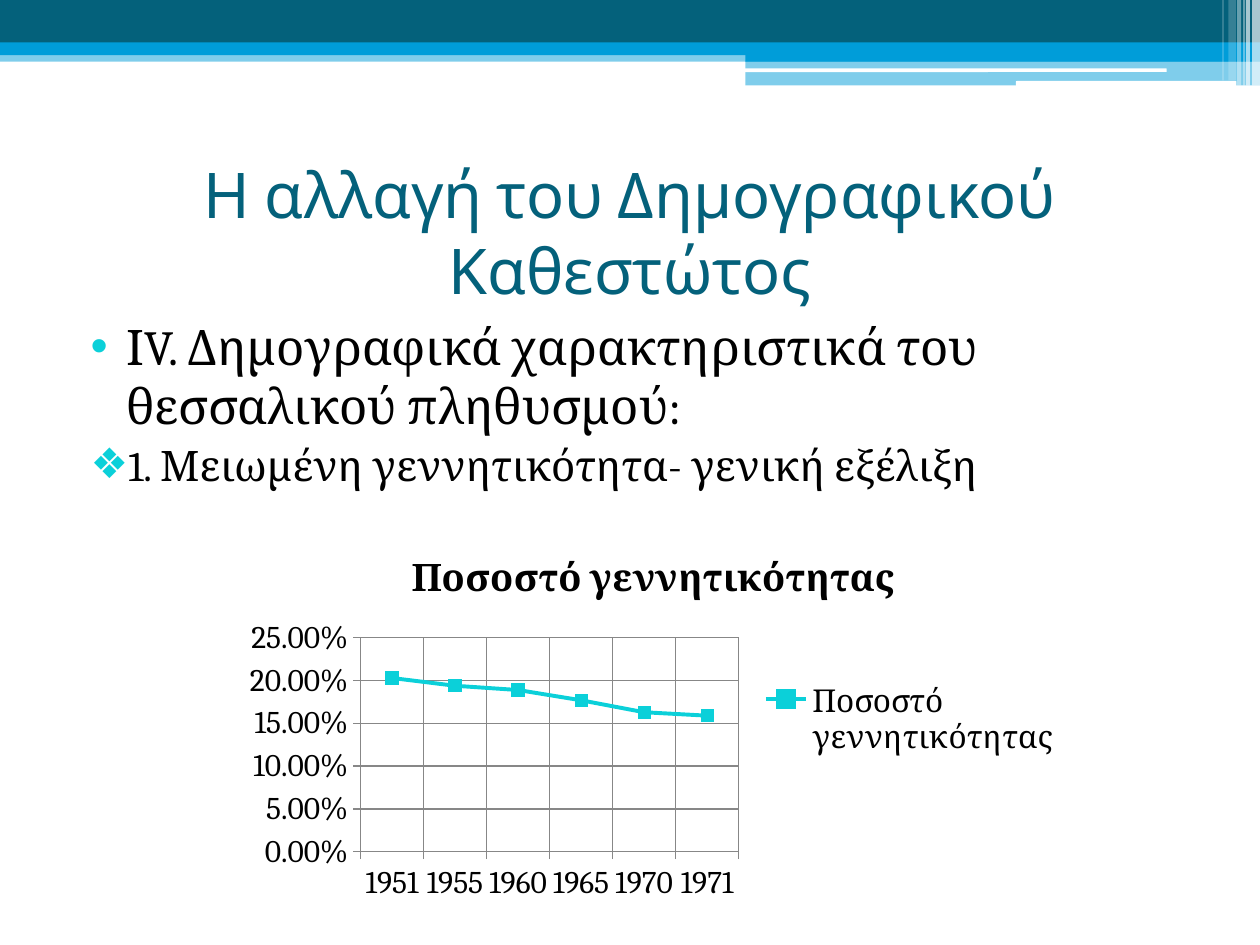
from lxml import etree
from pptx import Presentation
from pptx.chart.data import CategoryChartData
from pptx.dml.color import RGBColor
from pptx.enum.chart import XL_CHART_TYPE, XL_LEGEND_POSITION, XL_MARKER_STYLE, XL_TICK_MARK
from pptx.enum.shapes import MSO_SHAPE
from pptx.enum.text import MSO_ANCHOR, MSO_AUTO_SIZE, PP_ALIGN
from pptx.oxml.ns import qn
from pptx.util import Pt

RECT, ROUNDED = MSO_SHAPE.RECTANGLE, MSO_SHAPE.ROUNDED_RECTANGLE
LINE = XL_CHART_TYPE.LINE_MARKERS_STACKED
SQUARE, OUT, RIGHT = XL_MARKER_STYLE.SQUARE, XL_TICK_MARK.OUTSIDE, XL_LEGEND_POSITION.RIGHT
TOP, MIDDLE, CENTER, NO_FIT = MSO_ANCHOR.TOP, MSO_ANCHOR.MIDDLE, PP_ALIGN.CENTER, MSO_AUTO_SIZE.NONE
TEAL, BLUE, CYAN, WHITE, BLACK, GRAY = "04617B", "009DD9", "0BD0D9", "FFFFFF", "000000", "878787"


def rgb(color):
    return RGBColor.from_string(color)


def set_font(font, name, size, color, bold=False):
    for key, value in {"name": name, "size": Pt(size), "bold": bold}.items():
        setattr(font, key, value)
    font.color.rgb = rgb(color)


prs = Presentation()
prs.slide_width, prs.slide_height = Pt(720), Pt(540)
s = prs.slides.add_slide(prs.slide_layouts[1])

# Header bands and stripes: shape, left, top, width, height, colour, opacity %
bands = [
    (RECT, 0, 28.8, 720, 6.5, BLUE, 50),
    (RECT, 0, 0, 720, 24.5, TEAL, 100),
    (RECT, 0, 24.3, 720, 7.2, BLUE, 100),
    (RECT, 426, 28, 294, 7.2, BLUE, 100),
    (RECT, 426, 34.6, 294, 14.2, BLUE, 50),
    (ROUNDED, 425.5, 39.1, 241.2, 2.1, WHITE, 100),
    (ROUNDED, 580.5, 46.3, 126, 2.9, WHITE, 100),
    (RECT, 715.5, 0, 4.5, 49, WHITE, 65),
    (RECT, 712, 0, 2.2, 49, WHITE, 65),
    (RECT, 710.5, 0, 0.72, 49, WHITE, 60),
    (RECT, 707, 0, 2.2, 49, WHITE, 40),
    (RECT, 702, 0, 4.3, 46, WHITE, 20),
    (RECT, 698.5, 0, 0.72, 46, WHITE, 30),
]
for kind, left, top, width, height, color, opacity in bands:
    sp = s.shapes.add_shape(kind, Pt(left), Pt(top), Pt(width), Pt(height))
    sp.shadow.inherit = False
    sp.fill.solid()
    sp.fill.fore_color.rgb = rgb(color)
    sp.line.fill.background()
    if opacity < 100:
        clr = sp.fill._xPr.find(".//" + qn("a:srgbClr"))
        etree.SubElement(clr, qn("a:alpha"), val=str(opacity * 1000))

# Title and body placeholders
title, body = s.shapes.title, s.placeholders[1]
for sp, top, height, anchor in [(title, 90, 84.24, MIDDLE), (body, 177.12, 340.56, TOP)]:
    sp.left, sp.top, sp.width, sp.height = Pt(36), Pt(top), Pt(648), Pt(height)
    tf = sp.text_frame
    for key, value in {"word_wrap": True, "auto_size": NO_FIT, "vertical_anchor": anchor}.items():
        setattr(tf, key, value)

p = title.text_frame.paragraphs[0]
p.text = "Η αλλαγή του Δημογραφικού Καθεστώτος"
p.alignment = CENTER
set_font(p.runs[0].font, "Cabin", 36, TEAL)

# Bulleted list
items = [
    ("•", 28, 0, "ΙV. Δημογραφικά χαρακτηριστικά του θεσσαλικού πληθυσμού:"),
    ("❖", 24, 3, "1. Μειωμένη γεννητικότητα- γενική εξέλιξη"),
]
tf = body.text_frame
for i, (bullet, size, before, text) in enumerate(items):
    p = tf.add_paragraph() if i else tf.paragraphs[0]
    p.text = text
    pPr = p._p.get_or_add_pPr()
    pPr.set("marL", str(Pt(28.8)))
    pPr.set("indent", str(-Pt(20.16)))
    bu_clr = etree.SubElement(pPr, qn("a:buClr"))
    etree.SubElement(bu_clr, qn("a:srgbClr"), val=CYAN)
    etree.SubElement(pPr, qn("a:buChar"), char=bullet)
    p.space_before = Pt(before)
    set_font(p.runs[0].font, "Cambria", size, BLACK)

# Birth rate chart
name = "Ποσοστό γεννητικότητας"
data = CategoryChartData(number_format="0.00%")
data.categories = ["1951", "1955", "1960", "1965", "1970", "1971"]
data.add_series(name, [0.203, 0.194, 0.189, 0.177, 0.163, 0.159])
chart = s.shapes.add_chart(LINE, Pt(133.2), Pt(303.84), Pt(480.24), Pt(215.28), data).chart
set_font(chart.font, "Cambria", 18, BLACK)
chart.has_title = True
chart.chart_title.include_in_layout = False
chart.chart_title.text_frame.text = name
set_font(chart.chart_title.text_frame.paragraphs[0].runs[0].font, "Cambria", 21.6, BLACK, True)
chart.has_legend = True
chart.legend.position = RIGHT
chart.legend.include_in_layout = False

for axis in (chart.category_axis, chart.value_axis):
    axis.has_major_gridlines = True
    axis.major_tick_mark = OUT
    for line in (axis.format.line, axis.major_gridlines.format.line):
        line.color.rgb = rgb(GRAY)
        line.width = Pt(0.75)
axis = chart.value_axis
axis.minimum_scale, axis.maximum_scale, axis.major_unit = 0, 0.25, 0.05
axis.tick_labels.number_format = "0.00%"
axis.tick_labels.number_format_is_linked = False

plot = chart.plots[0]
plot.vary_by_categories = False
series = plot.series[0]
series.smooth = False
series.format.line.color.rgb = rgb(CYAN)
series.format.line.width = Pt(2.25)
series.marker.style = SQUARE
series.marker.size = 7
series.marker.format.fill.solid()
series.marker.format.fill.fore_color.rgb = rgb(CYAN)
series.marker.format.line.color.rgb = rgb(CYAN)

prs.save("out.pptx")
